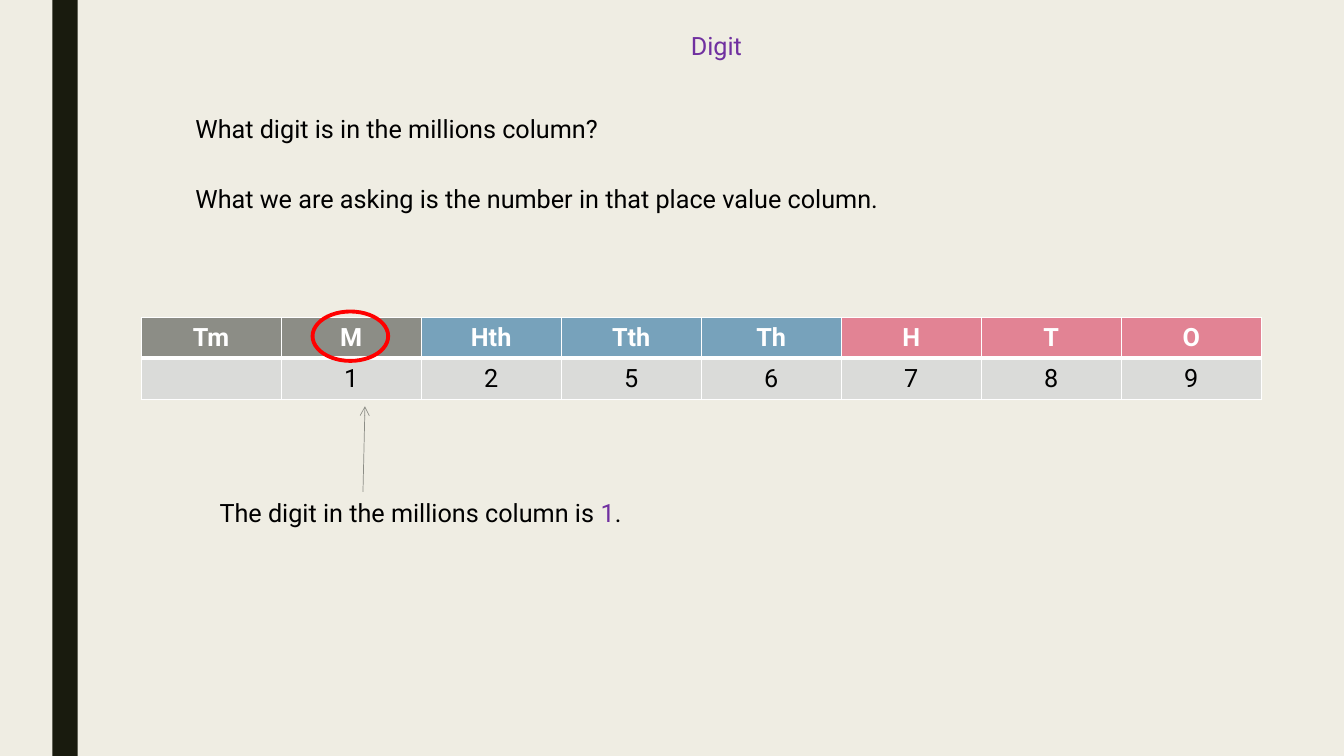
from lxml import etree
from pptx import Presentation
from pptx import util as u
from pptx.dml import color
from pptx.enum import shapes, text
from pptx.oxml import ns

BLACK, WHITE, PURPLE, GREY = "000000", "FFFFFF", "7030A0", "8C8D86"
BLUE, PINK, PALE = "77A2BB", "E28394", "DADBD9"


def rgb(value):
    """Return the colour for a hex string."""
    return color.RGBColor.from_string(value)


class Deck:
    """Holds the style and the current slide."""

    font = {"name": "Roboto", "size": u.Pt(18)}

    def __init__(self, width, height, background):
        """Start a one-slide deck with a plain background."""
        self.prs = Presentation()
        self.prs.slide_width, self.prs.slide_height = u.Inches(width), u.Inches(height)
        self.s = self.prs.slides.add_slide(self.prs.slide_layouts[6])
        fill = self.s.background.fill
        fill.solid()
        fill.fore_color.rgb = rgb(background)

    def add_runs(self, p, runs, align=text.PP_ALIGN.LEFT, bold=False):
        """Fill a paragraph with (text, colour) runs."""
        p.alignment = align
        for words, ink in runs:
            r = p.add_run()
            r.text = words
            for name, value in {**self.font, "bold": bold}.items():
                setattr(r.font, name, value)
            r.font.color.rgb = rgb(ink)

    def textbox(self, box, runs, align=text.PP_ALIGN.LEFT, wrap=False):
        """Add a one-paragraph text box."""
        tf = self.s.shapes.add_textbox(*map(u.Inches, box)).text_frame
        layout = {"word_wrap": wrap, "auto_size": text.MSO_AUTO_SIZE.SHAPE_TO_FIT_TEXT}
        for name, value in layout.items():
            setattr(tf, name, value)
        self.add_runs(tf.paragraphs[0], runs, align)

    def shape(self, kind, box, fill=None, line=None, weight=1):
        """Add a preset shape with optional fill and outline."""
        sp = self.s.shapes.add_shape(kind, *map(u.Inches, box))
        sp.shadow.inherit = False
        for part, ink in ((sp.fill, fill), (sp.line.fill, line)):
            if ink:
                part.solid()
                part.fore_color.rgb = rgb(ink)
            else:
                part.background()
        if line:
            sp.line.width = u.Pt(weight)

    def arrow(self, start, end, ink, weight):
        """Add a straight line with an open arrowhead at its end."""
        points = map(u.Inches, (*start, *end))
        c = self.s.shapes.add_connector(shapes.MSO_CONNECTOR.STRAIGHT, *points)
        c.line.color.rgb = rgb(ink)
        c.line.width = u.Pt(weight)
        props = c.element.spPr
        etree.SubElement(props.find(ns.qn("a:ln")), ns.qn("a:tailEnd"), type="arrow")
        etree.SubElement(props, ns.qn("a:effectLst"))

    def borders(self, cell, ink, weights):
        """Draw the four borders of a table cell."""
        props = cell._tc.get_or_add_tcPr()
        for i, (side, weight) in enumerate(weights.items()):
            ln = etree.Element(ns.qn(f"a:ln{side}"), w=str(u.Pt(weight)))
            solid = etree.SubElement(ln, ns.qn("a:solidFill"))
            etree.SubElement(solid, ns.qn("a:srgbClr"), val=ink)
            props.insert(i, ln)

    def table(self, box, rows, fills):
        """Add a table with a bold header row above a heavy rule."""
        size = len(rows), len(rows[0])
        table = self.s.shapes.add_table(*size, *map(u.Inches, box)).table
        table.horz_banding = False
        for i, row in enumerate(rows):
            header = i == 0
            for j, words in enumerate(row):
                cell = table.cell(i, j)
                cell.vertical_anchor = text.MSO_ANCHOR.MIDDLE
                cell.fill.solid()
                cell.fill.fore_color.rgb = rgb(fills[i][j])
                edges = {"L": 1, "R": 1, "T": 1 if header else 3, "B": 3 if header else 1}
                self.borders(cell, WHITE, edges)
                runs = [(words, WHITE if header else BLACK)] if words else []
                self.add_runs(cell.text_frame.paragraphs[0], runs, text.PP_ALIGN.CENTER, header)


def main():
    """Build the slide and save it."""
    deck = Deck(13.33, 7.5, "EFEDE3")
    deck.shape(shapes.MSO_SHAPE.RECTANGLE, (0.52, 0, 0.25, 7.5), fill="191B0E")
    deck.textbox((2.08, 0.25, 10.05, 0.4), [("Digit", PURPLE)], text.PP_ALIGN.CENTER, True)
    columns = ["Tm", "M", "Hth", "Tth", "Th", "H", "T", "O"]
    digits = ["", *"1256789"]
    fills = [[GREY] * 2 + [BLUE] * 3 + [PINK] * 3, [PALE] * 8]
    deck.table((1.4, 3.15, 11.11, 0.81), [columns, digits], fills)
    deck.textbox((1.84, 1.08, 4.2, 0.4), [("What digit is in the millions column?", BLACK)])
    deck.textbox((1.84, 1.77, 7.14, 0.4),
                 [("What we are asking is the number in that place value column.", BLACK)])
    deck.arrow((3.6, 4.88), (3.62, 4.03), GREY, 0.5)
    deck.shape(shapes.MSO_SHAPE.OVAL, (3.1, 3.09, 0.75, 0.49), line="FF0000", weight=2.75)
    deck.textbox((2.08, 4.88, 4.26, 0.4),
                 [("The digit in the millions column is ", BLACK), ("1", PURPLE), (".", BLACK)])
    deck.prs.save("out.pptx")


if __name__ == "__main__":
    main()
